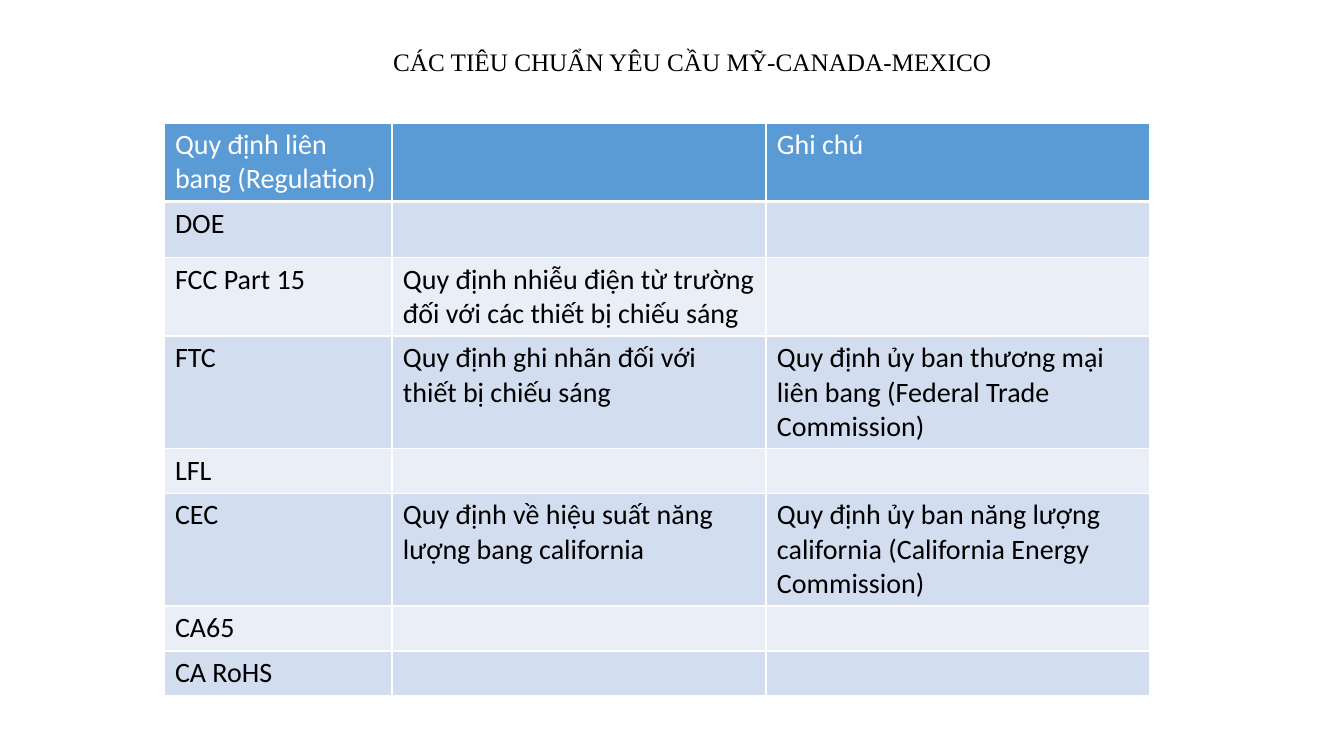
"""Build a slide with a table of lighting standards for the USA, Canada and Mexico."""
from lxml import etree
from pptx import Presentation
from pptx.dml.color import RGBColor
from pptx.enum.text import MSO_ANCHOR, PP_ALIGN
from pptx.oxml.ns import qn
from pptx.util import Emu, Pt

TOP = MSO_ANCHOR.TOP
LEFT = PP_ALIGN.LEFT
BLACK = RGBColor(0x00, 0x00, 0x00)
WHITE = RGBColor(0xFF, 0xFF, 0xFF)
HEADER_BLUE = RGBColor(0x5B, 0x9B, 0xD5)
BAND_DARK = RGBColor(0xD2, 0xDE, 0xEF)
BAND_LIGHT = RGBColor(0xEA, 0xEF, 0xF7)

TITLE_FONT = {"name": "Times New Roman", "size": Pt(18), "bold": False}
CELL_FONT = {"name": "Calibri", "size": Pt(20), "bold": False}
COLUMN_WIDTHS = [228, 374, 384]
ROW_HEIGHTS = [78, 56, 78, 112, 44, 112, 45, 44]
STANDARDS = [
    ("Quy định liên bang (Regulation)", "", "Ghi chú"),
    ("DOE", "", ""),
    ("FCC Part 15", "Quy định nhiễu điện từ trường đối với các thiết bị chiếu sáng", ""),
    ("FTC", "Quy định ghi nhãn đối với thiết bị chiếu sáng",
     "Quy định ủy ban thương mại liên bang (Federal Trade Commission)"),
    ("LFL", "", ""),
    ("CEC", "Quy định về hiệu suất năng lượng bang california",
     "Quy định ủy ban năng lượng california (California Energy Commission)"),
    ("CA65", "", ""),
    ("CA RoHS", "", ""),
]


def px(length):
    """Turn pixels into EMU."""
    return Emu(round(length * 12192000 / 1344))


def write_text(text_frame, text, font_format, color):
    """Write one left-aligned paragraph with the given font."""
    paragraph = text_frame.paragraphs[0]
    paragraph.alignment = LEFT
    run = paragraph.add_run()
    run.text = text
    for name, value in font_format.items():
        setattr(run.font, name, value)
    run.font.color.rgb = color


presentation = Presentation()
presentation.slide_width = px(1344)
presentation.slide_height = px(756)
slide = presentation.slides.add_slide(presentation.slide_layouts[5])

title = slide.shapes.title
title.left, title.top, title.width, title.height = px(383), px(41), px(748), px(40)
title.text_frame.vertical_anchor = TOP
title.text_frame.word_wrap = True
write_text(title.text_frame, "CÁC TIÊU CHUẨN YÊU CẦU MỸ-CANADA-MEXICO", TITLE_FONT, BLACK)

table = slide.shapes.add_table(
    len(ROW_HEIGHTS), len(COLUMN_WIDTHS), px(164), px(123),
    px(sum(COLUMN_WIDTHS)), px(sum(ROW_HEIGHTS))).table
for column, width in zip(table.columns, COLUMN_WIDTHS):
    column.width = px(width)

for row_index, (row, height, texts) in enumerate(zip(table.rows, ROW_HEIGHTS, STANDARDS)):
    row.height = px(height)
    is_header = row_index == 0
    band_color = BAND_DARK if row_index % 2 else BAND_LIGHT
    for cell, text in zip(row.cells, texts):
        properties = cell._tc.get_or_add_tcPr()
        for side in ("a:lnL", "a:lnR", "a:lnT", "a:lnB"):
            width = Pt(3) if is_header and side == "a:lnB" else Pt(1)
            border = etree.SubElement(properties, qn(side), w=str(width))
            border_fill = etree.SubElement(border, qn("a:solidFill"))
            etree.SubElement(border_fill, qn("a:srgbClr"), val=str(WHITE))
        cell.fill.solid()
        cell.fill.fore_color.rgb = HEADER_BLUE if is_header else band_color
        if text:
            cell.margin_left = cell.margin_right = px(11)
            cell.margin_top = cell.margin_bottom = px(5)
            write_text(cell.text_frame, text, CELL_FONT, WHITE if is_header else BLACK)

presentation.save("out.pptx")
